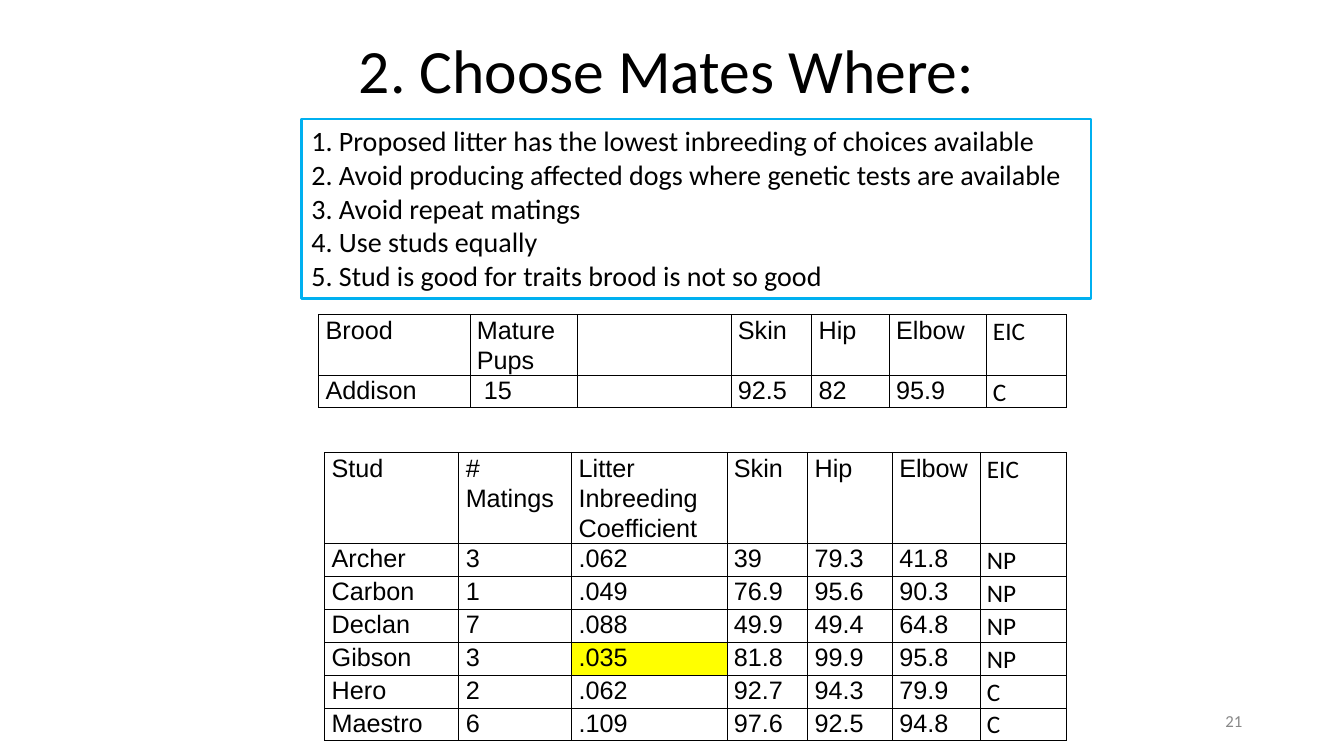
import pptx
import pptx.dml.color
import pptx.enum.shapes
import pptx.enum.text
import pptx.oxml
import pptx.oxml.ns
import pptx.util
from pptx.util import Inches

RGBColor = pptx.dml.color.RGBColor
PP_ALIGN = pptx.enum.text.PP_ALIGN
MSO_ANCHOR = pptx.enum.text.MSO_ANCHOR

BLACK = RGBColor(0x00, 0x00, 0x00)
GREY = RGBColor(0x88, 0x88, 0x88)
BLUE = RGBColor(0x00, 0xB0, 0xF0)
YELLOW = RGBColor(0xFF, 0xFF, 0x00)

RULES = [
    "1. Proposed litter has the lowest inbreeding of choices available",
    "2. Avoid producing affected dogs where genetic tests are available",
    "3. Avoid repeat matings",
    "4. Use studs equally",
    "5. Stud is good for traits brood is not so good",
]
BROOD = [
    ["Brood", "Mature\nPups", "", "Skin", "Hip", "Elbow", "EIC"],
    ["Addison", " 15", "", "92.5", "82", "95.9", "C"],
]
STUDS = [
    ["Stud", "# Matings", "Litter Inbreeding Coefficient", "Skin", "Hip", "Elbow", "EIC"],
    ["Archer", "3", ".062", "39", "79.3", "41.8", "NP"],
    ["Carbon", "1", ".049", "76.9", "95.6", "90.3", "NP"],
    ["Declan", "7", ".088", "49.9", "49.4", "64.8", "NP"],
    ["Gibson", "3", ".035", "81.8", "99.9", "95.8", "NP"],
    ["Hero", "2", ".062", "92.7", "94.3", "79.9", "C"],
    ["Maestro", "6", ".109", "97.6", "92.5", "94.8", "C"],
]


class SlideBuilder:
    font = "Calibri"
    table_font = "Arial"

    def __init__(self, prs):
        self.s = prs.slides.add_slide(prs.slide_layouts[5])

    def add_lines(self, tf, lines, size, font=None, color=BLACK, align=None, spacing=None):
        tf.word_wrap = True
        for i, line in enumerate(lines):
            p = tf.paragraphs[0] if i == 0 else tf.add_paragraph()
            p.alignment = align
            p.line_spacing = spacing
            r = p.add_run()
            r.text = line
            r.font.name = font or self.font
            r.font.size = pptx.util.Pt(size)
            r.font.color.rgb = color

    def title(self, text, x, y, w, h):
        sp = self.s.shapes.title
        sp.left, sp.top, sp.width, sp.height = map(Inches, (x, y, w, h))
        sp.text_frame.vertical_anchor = MSO_ANCHOR.MIDDLE
        self.add_lines(sp.text_frame, [text], 44, align=PP_ALIGN.CENTER, spacing=0.9)

    def outlined_box(self, lines, x, y, w, h):
        sp = self.s.shapes.add_shape(
            pptx.enum.shapes.MSO_SHAPE.RECTANGLE, *map(Inches, (x, y, w, h)))
        sp.shadow.inherit = False
        sp.fill.background()
        sp.line.color.rgb = BLUE
        sp.line.width = pptx.util.Pt(1.75)
        sp.text_frame.vertical_anchor = MSO_ANCHOR.TOP
        self.add_lines(sp.text_frame, lines, 20, align=PP_ALIGN.LEFT)

    def page_number(self, text, x, y, w, h):
        sp = self.s.shapes.add_textbox(*map(Inches, (x, y, w, h)))
        sp.text_frame.vertical_anchor = MSO_ANCHOR.MIDDLE
        self.add_lines(sp.text_frame, [text], 12, color=GREY, align=PP_ALIGN.RIGHT)

    def borders(self, cell):
        tcPr = cell._tc.get_or_add_tcPr()
        for i, side in enumerate(("lnL", "lnR", "lnT", "lnB")):
            tcPr.insert(i, pptx.oxml.parse_xml(
                f'<a:{side} {pptx.oxml.ns.nsdecls("a")} w="6350"><a:solidFill>'
                f'<a:srgbClr val="{BLACK}"/></a:solidFill></a:{side}>'))

    def table(self, rows, x, y, widths, heights, marked=None):
        tbl = self.s.shapes.add_table(
            len(rows), len(widths),
            *map(Inches, (x, y, sum(widths), sum(heights)))).table
        tbl.first_row = tbl.horz_banding = False
        for col, width in zip(tbl.columns, widths):
            col.width = Inches(width)
        for row, height in zip(tbl.rows, heights):
            row.height = Inches(height)
        for i, values in enumerate(rows):
            for j, value in enumerate(values):
                cell = tbl.cell(i, j)
                cell.margin_left = cell.margin_right = Inches(0.07)
                cell.margin_top = cell.margin_bottom = 0
                if (i, j) == marked:
                    cell.fill.solid()
                    cell.fill.fore_color.rgb = YELLOW
                else:
                    cell.fill.background()
                self.borders(cell)
                if value:
                    # The EIC column is set in the body font
                    last = j == len(widths) - 1
                    self.add_lines(cell.text_frame, value.split("\n"), 18,
                                   font=self.font if last else self.table_font,
                                   spacing=1.07)


def main():
    prs = pptx.Presentation()
    prs.slide_width, prs.slide_height = Inches(13.33), Inches(7.5)
    b = SlideBuilder(prs)

    # Brood and stud tables
    b.table(BROOD, 3.16, 3.12, [1.5, 1.07, 1.52, 0.8, 0.77, 0.96, 0.8], [0.52, 0.3])
    b.table(STUDS, 3.22, 4.49, [1.33, 1.12, 1.54, 0.8, 0.84, 0.87, 0.86],
            [0.83] + [0.27] * 6, marked=(4, 2))

    # Mating rules, title and page number
    b.outlined_box(RULES, 2.99, 1.18, 7.83, 1.78)
    b.title("2. Choose Mates Where:", 3.04, 0, 7.15, 1.45)
    b.page_number("21", 9.42, 6.95, 3, 0.4)

    prs.save("out.pptx")


if __name__ == "__main__":
    main()
